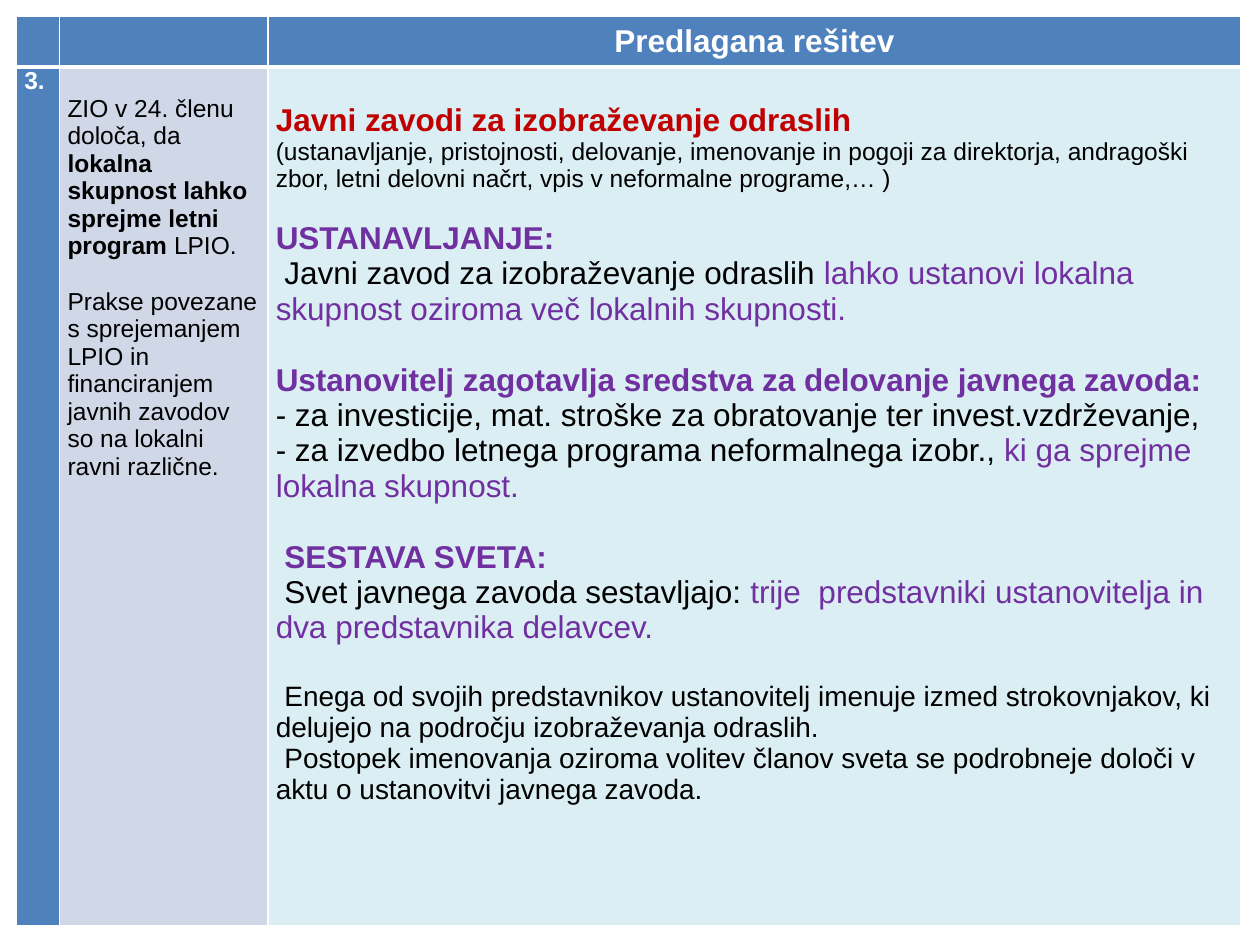
from lxml import etree
from pptx import Presentation
from pptx.dml.color import RGBColor
from pptx.enum.text import MSO_ANCHOR, PP_ALIGN
from pptx.oxml.ns import qn
from pptx.util import Pt

CENTER, LEFT = PP_ALIGN.CENTER, PP_ALIGN.LEFT
MIDDLE, TOP = MSO_ANCHOR.MIDDLE, MSO_ANCHOR.TOP

WHITE = RGBColor(0xFF, 0xFF, 0xFF)
BLACK = RGBColor(0x00, 0x00, 0x00)
BLUE = RGBColor(0x4F, 0x81, 0xBD)
LAVENDER = RGBColor(0xD0, 0xD8, 0xE8)
PALE_TEAL = RGBColor(0xDB, 0xEE, 0xF4)
RED = RGBColor(0xC0, 0x00, 0x00)
PURPLE = RGBColor(0x70, 0x30, 0xA0)

FONT = "Arial"
COLUMN_WIDTHS = (24.7, 119, 556)
ROW_HEIGHTS = (28.8, 491)
SMALL_GAP, LARGE_GAP = 16, 20.5  # one empty line at 14 pt and at 18 pt
FIRST_LINE = 5


def run(text, color=BLACK, bold=False):
    return text, color, bold


def para(*runs, size=18, gap=0, indent=0, align=LEFT):
    return {"runs": runs, "size": size, "gap": gap, "indent": indent, "align": align}


SITUATION = (
    para(run("ZIO v 24. členu določa, da "),
         run("lokalna skupnost lahko sprejme letni program ", bold=True),
         run("LPIO."), size=14),
    para(run("Prakse povezane s sprejemanjem LPIO in financiranjem javnih "
             "zavodov so na lokalni ravni različne."), size=14, gap=SMALL_GAP),
)

SOLUTION = (
    para(run("Javni zavodi za izobraževanje odraslih", RED, True)),
    para(run("(ustanavljanje, pristojnosti, delovanje, imenovanje in pogoji za "
             "direktorja, andragoški zbor, letni delovni načrt, vpis v "
             "neformalne programe,… )"), size=14),
    # Founding
    para(run("USTANAVLJANJE:", PURPLE, True), gap=SMALL_GAP),
    para(run("Javni zavod za izobraževanje odraslih "),
         run("lahko ustanovi lokalna skupnost oziroma več lokalnih skupnosti.",
             PURPLE), indent=FIRST_LINE),
    # Funding
    para(run("Ustanovitelj zagotavlja sredstva za delovanje javnega zavoda:",
             PURPLE, True), gap=LARGE_GAP),
    para(run("- za investicije, mat. stroške za obratovanje ter "
             "invest.vzdrževanje,")),
    para(run("- za izvedbo letnega programa neformalnega izobr., "),
         run("ki ga sprejme lokalna skupnost.", PURPLE)),
    # Council
    para(run("SESTAVA SVETA:", PURPLE, True), gap=LARGE_GAP, indent=FIRST_LINE),
    para(run("Svet javnega zavoda sestavljajo: "),
         run("trije  predstavniki ustanovitelja in dva predstavnika delavcev.",
             PURPLE), indent=FIRST_LINE),
    para(run("Enega od svojih predstavnikov ustanovitelj imenuje izmed "
             "strokovnjakov, ki delujejo na področju izobraževanja odraslih."),
         size=16, gap=LARGE_GAP, indent=FIRST_LINE),
    para(run("Postopek imenovanja oziroma volitev članov sveta se podrobneje "
             "določi v aktu o ustanovitvi javnega zavoda."),
         size=16, indent=FIRST_LINE),
)


def set_borders(cell, bottom_width):
    properties = cell._tc.get_or_add_tcPr()
    for side, width in (("L", 1), ("R", 1), ("T", 1), ("B", bottom_width)):
        line = etree.SubElement(properties, qn(f"a:ln{side}"), w=str(Pt(width)))
        solid = etree.SubElement(line, qn("a:solidFill"))
        etree.SubElement(solid, qn("a:srgbClr"), val=str(WHITE))


def style_cell(cell, fill, bottom_width=1, anchor=TOP, top_margin=0):
    set_borders(cell, bottom_width)
    cell.fill.solid()
    cell.fill.fore_color.rgb = fill
    cell.vertical_anchor = anchor
    cell.margin_left = cell.margin_right = Pt(4.5)
    cell.margin_top, cell.margin_bottom = Pt(top_margin), Pt(0)


def write_cell(cell, paragraphs):
    frame = cell.text_frame
    for index, content in enumerate(paragraphs):
        paragraph = frame.add_paragraph() if index else frame.paragraphs[0]
        paragraph.alignment = content["align"]
        paragraph.font.name = FONT
        paragraph.font.size = Pt(content["size"])
        if content["gap"]:
            paragraph.space_before = Pt(content["gap"])
        if content["indent"]:
            paragraph._p.get_or_add_pPr().set("indent", str(Pt(content["indent"])))
        agree = len({part[1:] for part in content["runs"]}) == 1
        for text, color, bold in content["runs"]:
            text_run = paragraph.add_run()
            text_run.text = text
            font = paragraph.font if agree else text_run.font
            font.color.rgb = color
            font.bold = bold


def add_grid(slide):
    table = slide.shapes.add_table(
        len(ROW_HEIGHTS), len(COLUMN_WIDTHS), Pt(9.4), Pt(9.4),
        Pt(sum(COLUMN_WIDTHS)), Pt(sum(ROW_HEIGHTS))).table
    for column, width in zip(table.columns, COLUMN_WIDTHS):
        column.width = Pt(width)
    for row, height in zip(table.rows, ROW_HEIGHTS):
        row.height = Pt(height)
    return table


def main():
    presentation = Presentation()
    presentation.slide_width, presentation.slide_height = Pt(720), Pt(540)
    slide = presentation.slides.add_slide(presentation.slide_layouts[6])
    table = add_grid(slide)

    # Header row
    for column in range(len(COLUMN_WIDTHS)):
        style_cell(table.cell(0, column), BLUE, bottom_width=3, anchor=MIDDLE)
    write_cell(table.cell(0, 2),
               [para(run("Predlagana rešitev", WHITE, True), align=CENTER)])

    # Number, present situation and proposed solution
    number = [para(run("3.", WHITE, True), size=14)]
    body = ((number, BLUE, 0), (SITUATION, LAVENDER, SMALL_GAP),
            (SOLUTION, PALE_TEAL, LARGE_GAP))
    for column, (paragraphs, fill, top_margin) in enumerate(body):
        cell = table.cell(1, column)
        style_cell(cell, fill, top_margin=top_margin)
        write_cell(cell, paragraphs)

    presentation.save("out.pptx")


if __name__ == "__main__":
    main()
